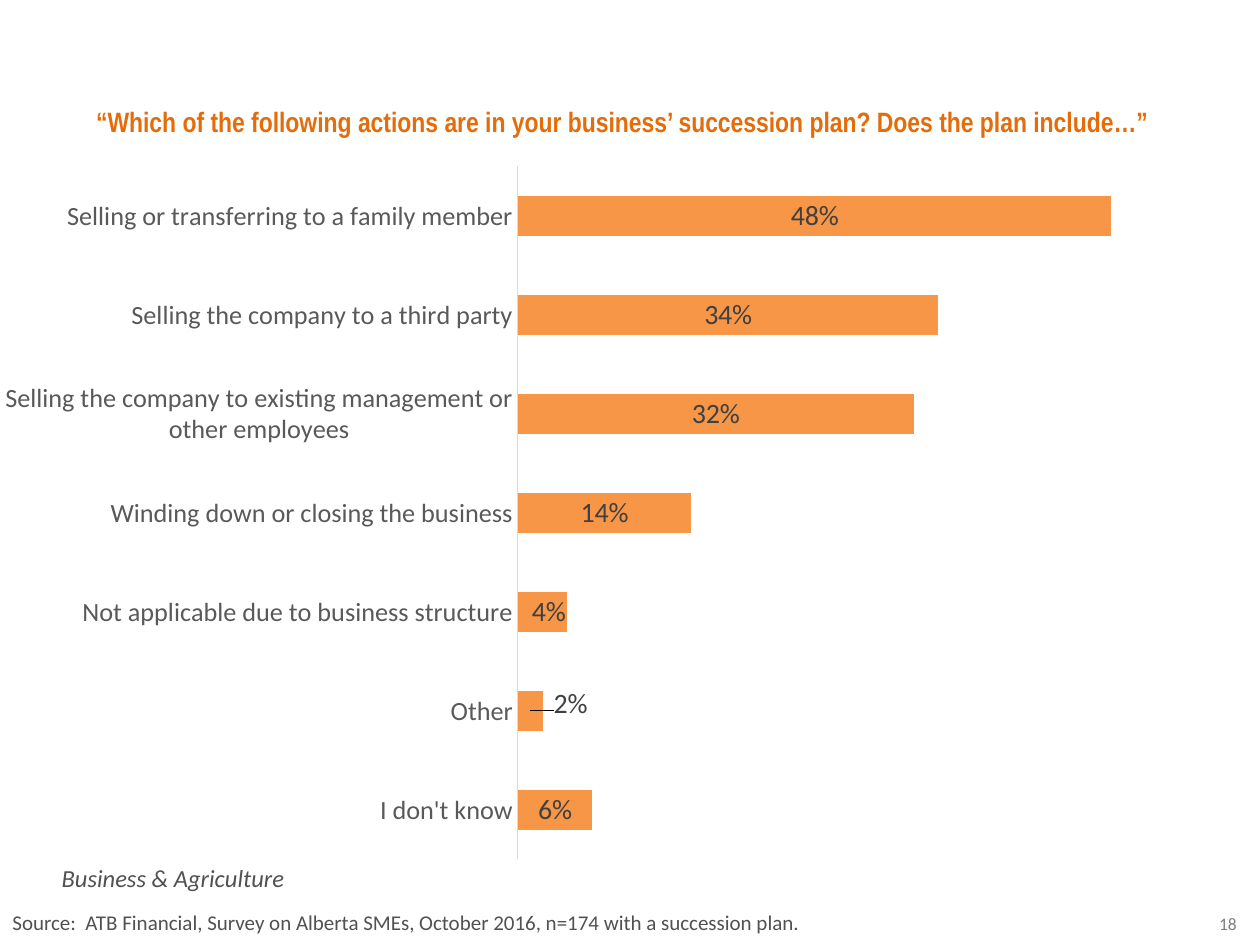
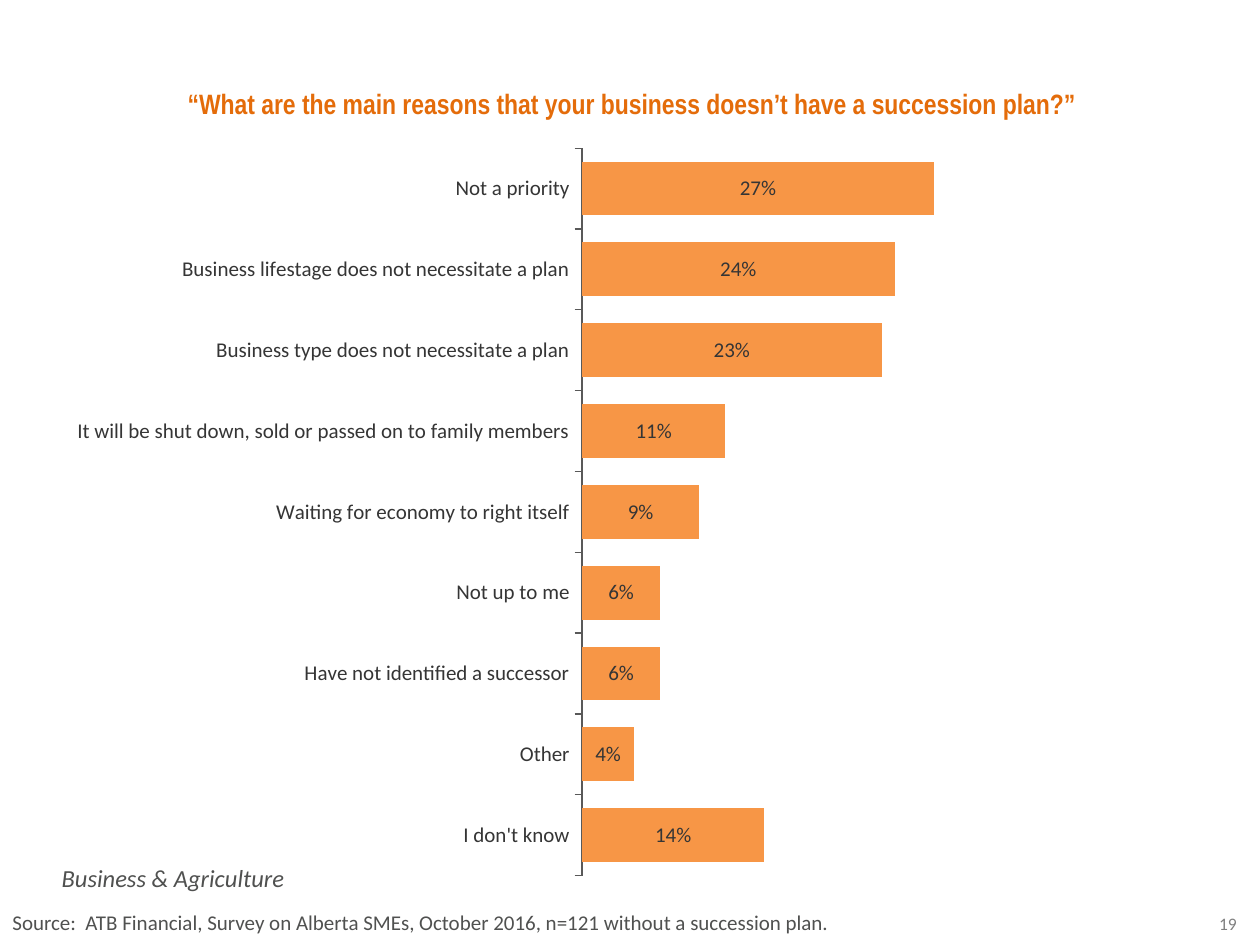
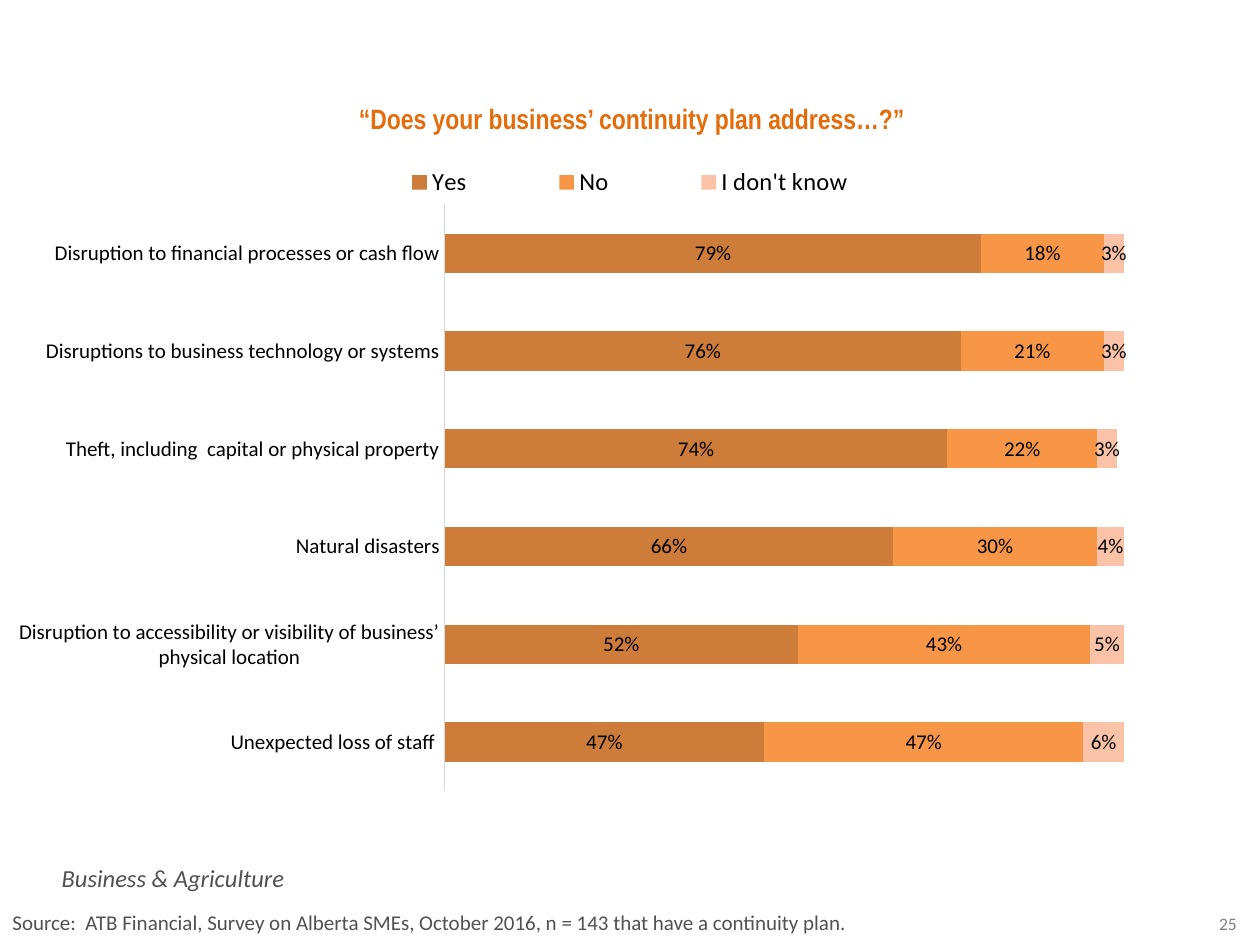
from lxml.etree import SubElement
from pptx import Presentation
from pptx.chart.data import CategoryChartData
from pptx.dml.color import RGBColor
from pptx.enum.chart import XL_CHART_TYPE as ChartType, XL_LABEL_POSITION as LabelPos
from pptx.enum.chart import XL_LEGEND_POSITION as LegendPos, XL_TICK_MARK as Tick
from pptx.enum.shapes import MSO_SHAPE as Shape
from pptx.enum.text import MSO_ANCHOR as Anchor, PP_ALIGN as Align
from pptx.oxml import parse_xml
from pptx.oxml.ns import nsdecls, qn
from pptx.util import Pt

ACCENT, GREY, PAGE_GREY = "E46C0A", "505150", "808080"
BROWN, ORANGE, PEACH = "CD7C3A", "F79646", "FAC3A8"
BODY_FONT, TITLE_FONT = "Calibri", "Arial Narrow"
FOOTER = "Business & Agriculture"

SLIDES = [
    dict(
        page="18",
        question="“Which of the following actions are in your business’ succession plan? Does the plan include…”",
        question_box=(0, 49, 711.4, 40.3),
        source="Source:  ATB Financial, Survey on Alberta SMEs, October 2016, n=174 with a succession plan.",
        chart_box=(0, 94.3, 720, 405.4),
        plot=(0.411, 0.002, 0.589, 0.977),
        categories=[
            "Selling or transferring to a family member",
            "Selling the company to a third party",
            "Selling the company to existing management or other employees",
            "Winding down or closing the business",
            "Not applicable due to business structure",
            "Other",
            "I don't know",
        ],
        series=[("Series 1", ORANGE, (0.48, 0.34, 0.32, 0.14, 0.04, 0.02, 0.06))],
        gap=150, maximum=0.6, tick=Tick.NONE, axis_line="D9D9D9",
        axis_size=15, axis_color="595959", label_size=16, label_color="404040",
        moved_labels={4: (0.005, 0.001), 5: (0.032, -0.01)},
    ),
    dict(
        page="19",
        question="“What are the main reasons that your business doesn’t have a succession plan?”",
        question_box=(17.3, 38.9, 687.6, 40.3),
        source="Source:  ATB Financial, Survey on Alberta SMEs, October 2016, n=121 without a succession plan.",
        chart_box=(0, 53.3, 720, 468.7),
        plot=(0.462, 0.067, 0.517, 0.887),
        categories=[
            "Not a priority",
            "Business lifestage does not necessitate a plan",
            "Business type does not necessitate a plan",
            "It will be shut down, sold or passed on to family members",
            "Waiting for economy to right itself",
            "Not up to me",
            "Have not identified a successor",
            "Other",
            "I don't know",
        ],
        series=[("Series 1", ORANGE, (0.27, 0.24, 0.23, 0.11, 0.09, 0.06, 0.06, 0.04, 0.14))],
        gap=50, maximum=0.5, tick=Tick.OUTSIDE, axis_line="595959",
        axis_size=12, axis_color="353535", label_size=12, label_color="353535",
    ),
    dict(
        page="25",
        question="“Does your business’ continuity plan address…?”",
        question_box=(17.3, 47.5, 687.6, 40.3),
        source="Source:  ATB Financial, Survey on Alberta SMEs, October 2016, n = 143 that have a continuity plan.",
        chart_box=(0, 81.4, 720, 380.9),
        plot=(0.353, 0.093, 0.647, 0.88),
        categories=[
            "Disruption to financial processes or cash flow",
            "Disruptions to business technology or systems",
            "Theft, including  capital or physical property",
            "Natural disasters",
            "Disruption to accessibility or visibility of business’ physical location",
            "Unexpected loss of staff ",
        ],
        series=[
            ("Yes", BROWN, (0.79, 0.76, 0.74, 0.66, 0.52, 0.47)),
            ("No", ORANGE, (0.18, 0.21, 0.22, 0.3, 0.43, 0.47)),
            ("I don't know", PEACH, (0.03, 0.03, 0.03, 0.04, 0.05, 0.06)),
        ],
        gap=150, maximum=1.2, tick=Tick.NONE, axis_line="D9D9D9",
        axis_size=12, axis_color="000000", label_size=12, label_color="000000",
        legend=(0.26, 0.025, 0.48, 0.07),
    ),
]


def rgb(value):
    """Turn a hex string into a colour."""
    return RGBColor.from_string(value)


def style(font, size, color, name=BODY_FONT, bold=False, italic=False):
    """Set every property of a font."""
    font.size, font.name, font.bold, font.italic = Pt(size), name, bold, italic
    font.color.rgb = rgb(color)


def write(shape, text, align=Align.LEFT, anchor=Anchor.TOP, **font):
    """Put one formatted paragraph in a shape."""
    frame = shape.text_frame
    frame.word_wrap = True
    frame.vertical_anchor = anchor
    paragraph = frame.paragraphs[0]
    paragraph.alignment = align
    run = paragraph.add_run()
    run.text = text
    style(run.font, **font)


def add_text(slide, box, text, **options):
    """Add a text box at a box given in points."""
    write(slide.shapes.add_textbox(*map(Pt, box)), text, **options)


def add_question(slide, box, text):
    """Add the survey question in an unfilled callout."""
    callout = slide.shapes.add_shape(Shape.ROUNDED_RECTANGULAR_CALLOUT, *map(Pt, box))
    for index, value in enumerate((-0.154, 0.389, 0.167)):
        callout.adjustments[index] = value
    callout.shadow.inherit = False
    callout.fill.background()
    callout.line.fill.background()
    write(callout, text, align=Align.CENTER, anchor=Anchor.MIDDLE,
          size=16, color=ACCENT, name=TITLE_FONT, bold=True)


def manual_layout(fractions, edge=False, inner=False):
    """Build a chart layout element from x, y and optional w, h."""
    layout = parse_xml(f"<c:layout {nsdecls('c')}><c:manualLayout/></c:layout>")
    settings = [("layoutTarget", "inner")] if inner else []
    if edge:
        settings += [("xMode", "edge"), ("yMode", "edge")]
    settings += zip("xywh", fractions)
    for tag, value in settings:
        SubElement(layout[0], qn(f"c:{tag}")).set("val", str(value))
    return layout


def move_label(series, index, offset, size, color):
    """Shift the label of one bar by a fraction of the chart."""
    label = series.points[index].data_label
    label.position = LabelPos.CENTER
    style(label.font, size, color)
    idx = series._element.xpath(f".//c:dLbl/c:idx[@val='{index}']")[0]
    idx.addnext(parse_xml(f'<c:numFmt {nsdecls("c")} formatCode="0%" sourceLinked="0"/>'))
    idx.addnext(manual_layout(offset))


def add_bars(slide, content):
    """Add the stacked bar chart of a slide."""
    data = CategoryChartData(number_format="0%")
    data.categories = content["categories"]
    for name, _, values in content["series"]:
        data.add_series(name, values)
    chart = slide.shapes.add_chart(
        ChartType.BAR_STACKED, *map(Pt, content["chart_box"]), data).chart
    chart.has_title = False
    style(chart.font, content["axis_size"], content["axis_color"])
    chart._chartSpace.xpath("c:chart")[0].addnext(parse_xml(
        f"<c:spPr {nsdecls('c', 'a')}><a:noFill/><a:ln><a:noFill/></a:ln></c:spPr>"))

    plot_area = chart._chartSpace.xpath(".//c:plotArea")[0]
    for layout in plot_area.xpath("c:layout"):
        plot_area.remove(layout)
    plot_area.insert(0, manual_layout(content["plot"], edge=True, inner=True))

    choices = chart.category_axis
    choices.reverse_order = True
    choices.has_major_gridlines = False
    choices.major_tick_mark, choices.minor_tick_mark = content["tick"], Tick.NONE
    choices.format.line.width = Pt(0.75)
    choices.format.line.color.rgb = rgb(content["axis_line"])
    style(choices.tick_labels.font, content["axis_size"], content["axis_color"])
    shares = chart.value_axis
    shares.visible = shares.has_major_gridlines = False
    shares.minimum_scale, shares.maximum_scale = 0, content["maximum"]

    bars = chart.plots[0]
    bars.gap_width, bars.overlap, bars.vary_by_categories = content["gap"], 100, False
    label_look = content["label_size"], content["label_color"]
    for series, (_, color, _) in zip(bars.series, content["series"]):
        series.invert_if_negative = False
        series.format.fill.solid()
        series.format.fill.fore_color.rgb = rgb(color)
        labels = series.data_labels
        labels.show_value = True
        labels.number_format, labels.number_format_is_linked = "0%", False
        labels.position = LabelPos.CENTER
        style(labels.font, *label_look)
        for index, offset in content.get("moved_labels", {}).items():
            move_label(series, index, offset, *label_look)

    chart.has_legend = "legend" in content
    if chart.has_legend:
        legend = chart.legend
        legend.position, legend.include_in_layout = LegendPos.TOP, False
        style(legend.font, 14, "000000")
        legend._element.xpath("c:legendPos")[0].addnext(
            manual_layout(content["legend"], edge=True))


def main():
    """Build the survey slides and save them."""
    deck = Presentation()
    deck.slide_width, deck.slide_height = Pt(720), Pt(540)
    for content in SLIDES:
        slide = deck.slides.add_slide(deck.slide_layouts[6])
        add_text(slide, (684, 518.4, 35.3, 19.4), content["page"],
                 align=Align.CENTER, size=10, color=PAGE_GREY)
        add_text(slide, (28.1, 489.6, 202.3, 24.5), FOOTER, size=14, color=GREY, italic=True)
        add_question(slide, content["question_box"], content["question"])
        add_bars(slide, content)
        add_text(slide, (0, 516.2, 670.3, 21.6), content["source"], size=12, color=GREY)
    deck.save("out.pptx")


if __name__ == "__main__":
    main()
